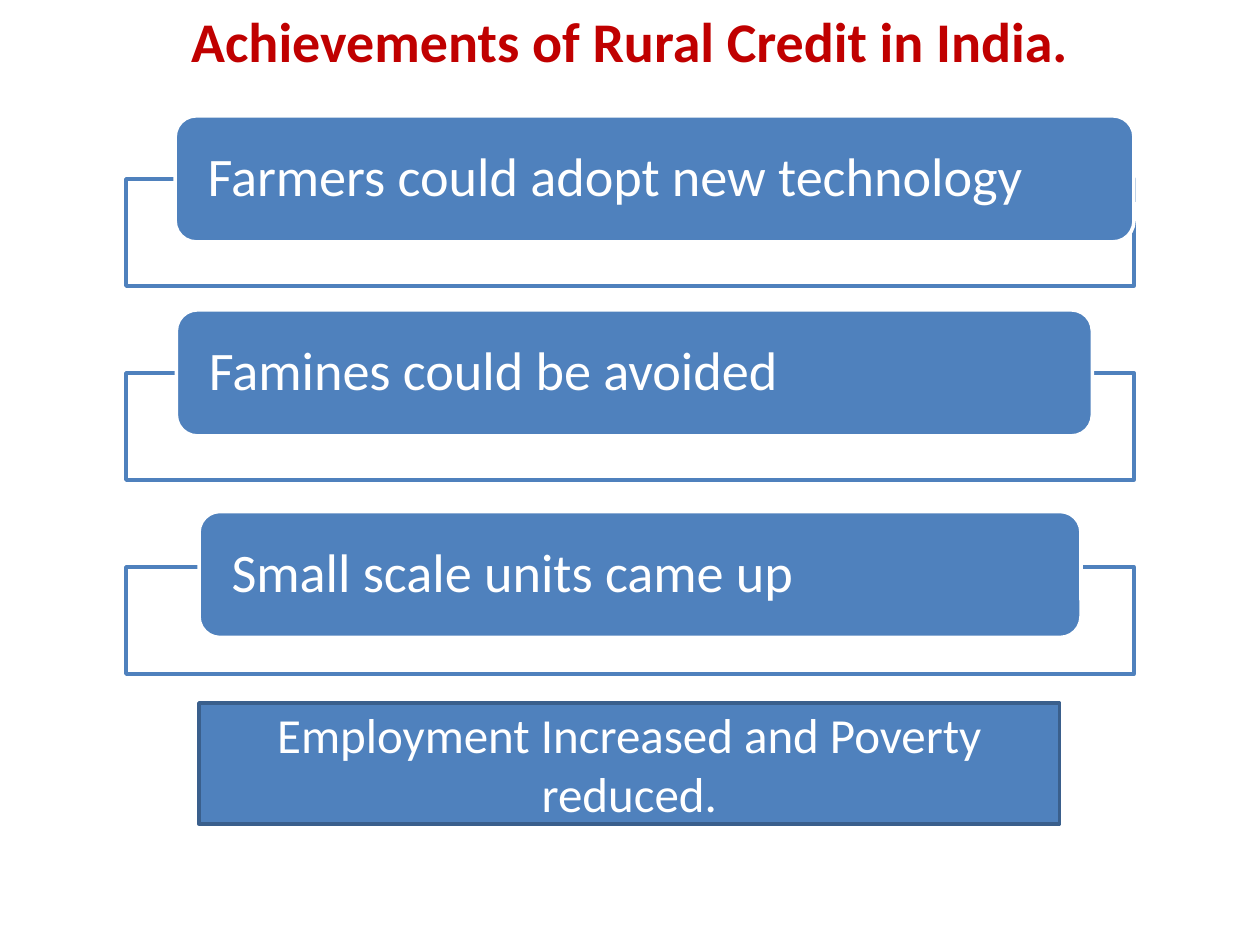
from pptx import Presentation
from pptx.dml.color import RGBColor
from pptx.enum.shapes import MSO_SHAPE as Shape
from pptx.enum.text import MSO_ANCHOR as Anchor, PP_ALIGN as Align
from pptx.util import Inches, Pt

WHITE = RGBColor(0xFF, 0xFF, 0xFF)
BLUE = RGBColor(0x4F, 0x81, 0xBD)
DARK_BLUE = RGBColor(0x3A, 0x5F, 0x8C)
RED = RGBColor(0xC0, 0x00, 0x00)

FIRST_FRAME_TOP = 1.42
FRAME_STEP = 1.54
ACHIEVEMENTS = [
    ("Farmers could adopt new technology", 1.39, 0.92, 7.61),
    ("Famines could be avoided", 1.4, 2.46, 7.27),
    ("Small scale units came up", 1.58, 4.06, 7),
]


class SlideBuilder:
    font_name = "Calibri"
    line_width = Pt(2)

    def __init__(self, page):
        self.page = page

    def set_text(self, box, text, size, color, align, bold=False):
        frame = box.text_frame
        frame.word_wrap = True
        frame.text = text
        para = frame.paragraphs[0]
        para.alignment = align
        font = para.runs[0].font
        font.name = self.font_name
        font.size = Pt(size)
        font.bold = bold
        font.color.rgb = color
        return frame

    def title(self, text):
        box = self.page.shapes.add_textbox(0, 0, Inches(10), Inches(0.7))
        self.set_text(box, text, 32, RED, Align.CENTER, bold=True)

    def panel(self, kind, left, top, width, height, fill, line):
        shape = self.page.shapes.add_shape(
            kind, Inches(left), Inches(top), Inches(width), Inches(height))
        shape.shadow.inherit = False
        shape.fill.solid()
        shape.fill.fore_color.rgb = fill
        shape.line.color.rgb = line
        shape.line.width = self.line_width
        return shape

    def frame(self, top):
        self.panel(Shape.RECTANGLE, 1, top, 8, 0.85, WHITE, BLUE)

    def label(self, text, left, top, width):
        shape = self.panel(Shape.ROUNDED_RECTANGLE, left, top, width, 1, BLUE, WHITE)
        frame = self.set_text(shape, text, 31, WHITE, Align.LEFT)
        frame.vertical_anchor = Anchor.MIDDLE
        frame.margin_left = frame.margin_right = Inches(0.21)
        frame.margin_top = frame.margin_bottom = 0
        frame.paragraphs[0].line_spacing = 0.9

    def result(self, text):
        shape = self.panel(Shape.RECTANGLE, 1.58, 5.58, 6.83, 0.96, BLUE, DARK_BLUE)
        frame = self.set_text(shape, text, 28, WHITE, Align.CENTER)
        frame.vertical_anchor = Anchor.MIDDLE


def main():
    deck = Presentation()
    deck.slide_width = Inches(10)
    deck.slide_height = Inches(7.5)
    builder = SlideBuilder(deck.slides.add_slide(deck.slide_layouts[6]))
    builder.title("Achievements of Rural Credit in India.")
    for index, (text, left, top, width) in enumerate(ACHIEVEMENTS):
        builder.frame(FIRST_FRAME_TOP + index * FRAME_STEP)
        builder.label(text, left, top, width)
    builder.result("Employment Increased and Poverty reduced.")
    deck.save("out.pptx")


if __name__ == "__main__":
    main()
